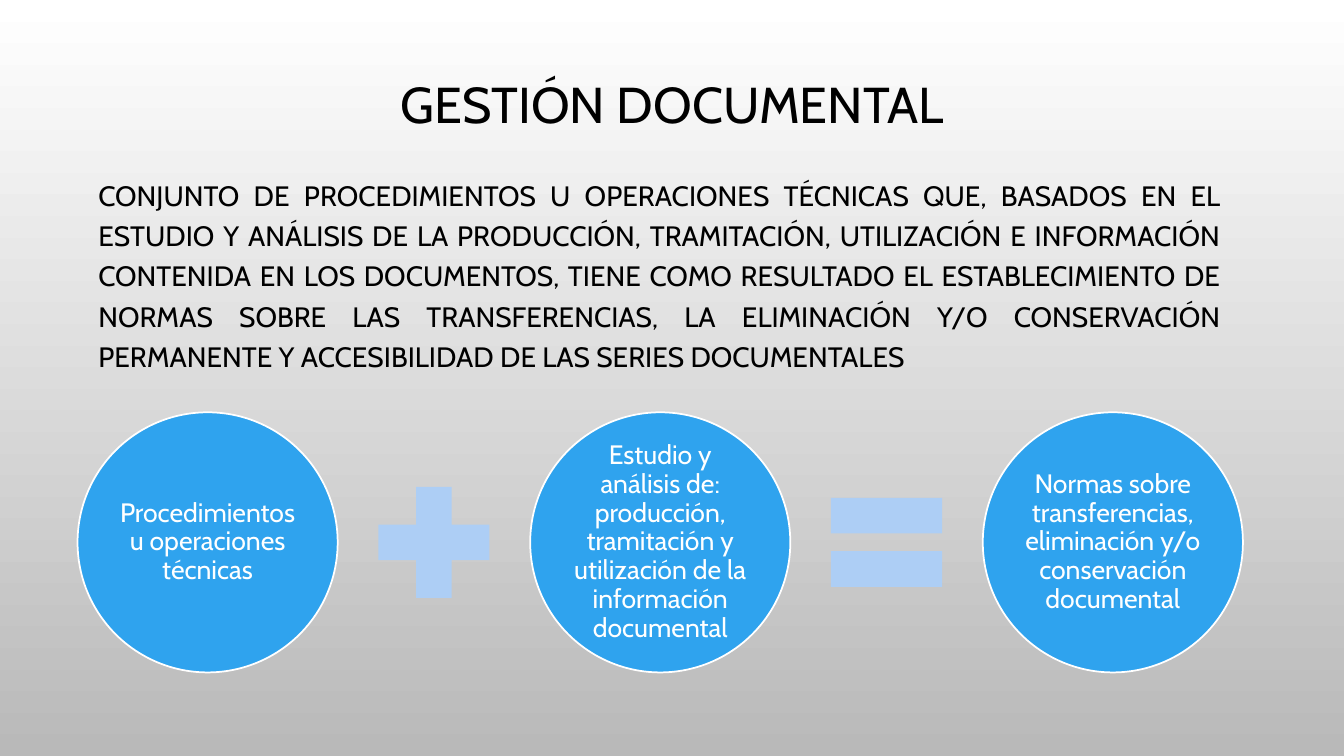
"""Build the slide that defines document management and sums up its parts."""
from dataclasses import dataclass

from lxml.etree import SubElement
from pptx import Presentation
from pptx.dml.color import RGBColor
from pptx.enum.shapes import MSO_SHAPE
from pptx.enum.text import MSO_ANCHOR, MSO_AUTO_SIZE, PP_ALIGN
from pptx.oxml.ns import qn
from pptx.util import Pt

HEADING = "GESTIÓN DOCUMENTAL"
DEFINITION = (
    "CONJUNTO DE PROCEDIMIENTOS U OPERACIONES TÉCNICAS QUE, BASADOS EN EL "
    "ESTUDIO Y ANÁLISIS DE LA PRODUCCIÓN, TRAMITACIÓN, UTILIZACIÓN E "
    "INFORMACIÓN CONTENIDA EN LOS DOCUMENTOS, TIENE COMO RESULTADO EL "
    "ESTABLECIMIENTO DE NORMAS SOBRE LAS TRANSFERENCIAS, LA ELIMINACIÓN Y/O "
    "CONSERVACIÓN PERMANENTE Y ACCESIBILIDAD DE LAS SERIES DOCUMENTALES"
)
TERMS = [
    "Procedimientos u operaciones técnicas",
    "Estudio y análisis de: producción, tramitación y utilización de la "
    "información documental",
    "Normas sobre transferencias, eliminación y/o conservación documental",
]
OPERATORS = [MSO_SHAPE.MATH_PLUS, MSO_SHAPE.MATH_EQUAL]

SLIDE_SIZE = (960, 540)
HEADING_BOX = (72, 13.7, 816, 126)
DEFINITION_BOX = (63, 118.8, 816, 269.3)
FIRST_CENTRE_X, CENTRE_Y, TERM_STEP = 148.3, 387.4, 323.3
TERM_SIZE, OPERATOR_SIZE, TERM_INSET = 185.8, 108, 1.9


@dataclass(frozen=True)
class Theme:
    """Colours, font and type sizes of the slide."""
    font: str = "Cabin"
    ink: RGBColor = RGBColor(0, 0, 0)
    white: RGBColor = RGBColor(255, 255, 255)
    shade: RGBColor = RGBColor.from_string("B9B9B9")
    term: RGBColor = RGBColor.from_string("2FA3EE")
    operator: RGBColor = RGBColor.from_string("ADCEF5")
    heading_size: float = 36
    definition_size: float = 20
    term_size: float = 19


THEME = Theme()


def write(holder, wording, size, color, align, anchor, spacing):
    """Put one formatted paragraph into a shape."""
    frame = holder.text_frame
    frame.text = wording
    frame.word_wrap = True
    frame.auto_size = MSO_AUTO_SIZE.NONE
    frame.vertical_anchor = anchor
    paragraph = frame.paragraphs[0]
    paragraph.alignment = align
    paragraph.line_spacing = spacing
    paragraph.space_before = Pt(0)
    properties = paragraph._p.get_or_add_pPr()
    properties.set("marL", "0")
    properties.set("indent", "0")
    SubElement(properties, qn("a:buNone"))
    paragraph.font.name = THEME.font
    paragraph.font.size = Pt(size)
    paragraph.font.color.rgb = color


def place(holder, box):
    """Move a placeholder to a box given in points."""
    holder.left, holder.top, holder.width, holder.height = map(Pt, box)


def add_symbol(slide, kind, centre_x, size, color):
    """Draw a square-framed shape centred on the equation line."""
    symbol = slide.shapes.add_shape(
        kind, Pt(centre_x - size / 2), Pt(CENTRE_Y - size / 2), Pt(size), Pt(size))
    symbol.shadow.inherit = False
    symbol.fill.solid()
    symbol.fill.fore_color.rgb = color
    symbol.line.fill.background()
    return symbol


def add_term(slide, wording, centre_x):
    """Draw one circle of the equation with its text."""
    circle = add_symbol(slide, MSO_SHAPE.OVAL, centre_x, TERM_SIZE, THEME.term)
    circle.line.color.rgb = THEME.white
    circle.line.width = Pt(1.25)
    frame = circle.text_frame
    frame.margin_left = frame.margin_right = Pt(TERM_INSET)
    frame.margin_top = frame.margin_bottom = Pt(TERM_INSET)
    write(circle, wording, THEME.term_size, THEME.white,
          PP_ALIGN.CENTER, MSO_ANCHOR.MIDDLE, 0.9)


def main():
    """Assemble and save the slide."""
    deck = Presentation()
    deck.slide_width, deck.slide_height = map(Pt, SLIDE_SIZE)
    slide = deck.slides.add_slide(deck.slide_layouts[1])

    backdrop = slide.background.fill
    backdrop.gradient()
    backdrop.gradient_angle = 270
    for stop, color in zip(backdrop.gradient_stops, (THEME.white, THEME.shade)):
        stop.color.rgb = color

    heading, definition = slide.placeholders
    place(heading, HEADING_BOX)
    write(heading, HEADING, THEME.heading_size, THEME.ink,
          PP_ALIGN.CENTER, MSO_ANCHOR.MIDDLE, 0.9)
    place(definition, DEFINITION_BOX)
    write(definition, DEFINITION, THEME.definition_size, THEME.ink,
          PP_ALIGN.JUSTIFY, MSO_ANCHOR.TOP, 1.2)

    for index, wording in enumerate(TERMS):
        add_term(slide, wording, FIRST_CENTRE_X + index * TERM_STEP)
    for index, kind in enumerate(OPERATORS):
        add_symbol(slide, kind, FIRST_CENTRE_X + (index + 0.5) * TERM_STEP,
                   OPERATOR_SIZE, THEME.operator)

    deck.save("out.pptx")


if __name__ == "__main__":
    main()
